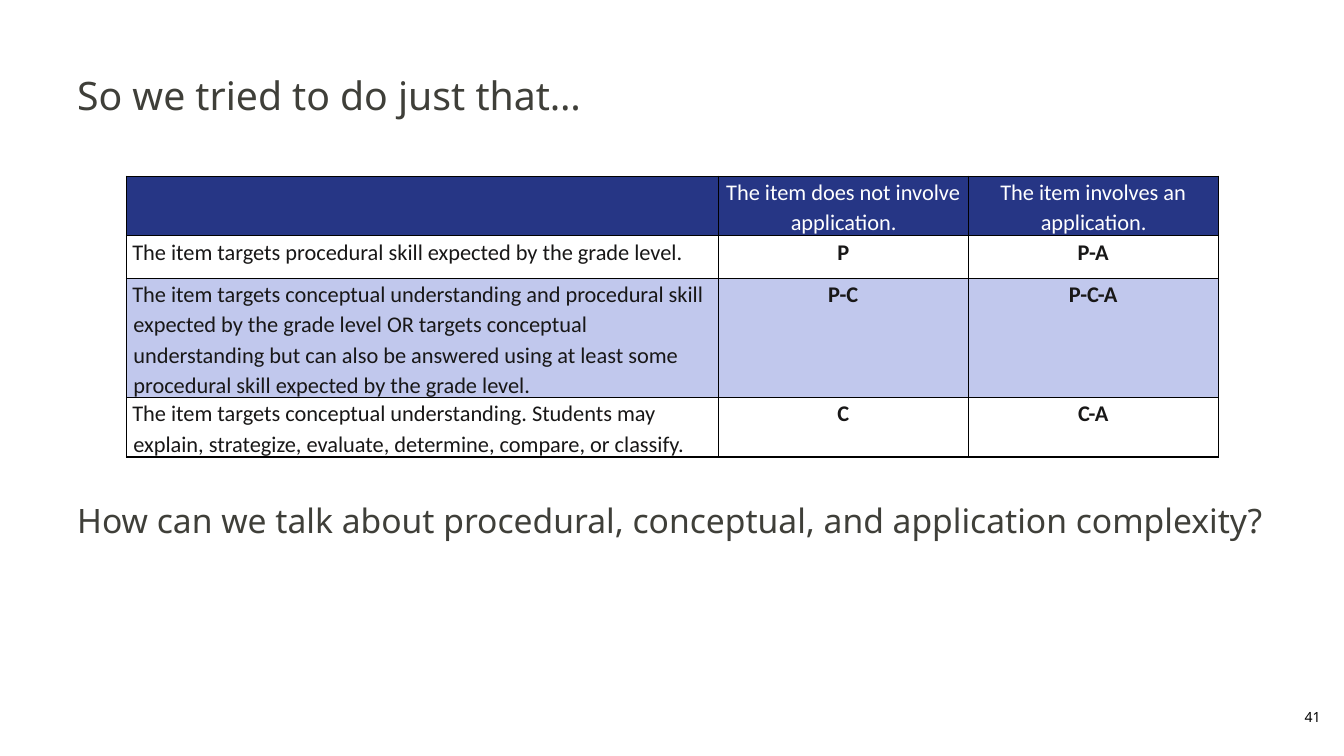
from dataclasses import dataclass
from pptx import Presentation
from pptx.dml.color import RGBColor as Rgb
from pptx.enum.text import MSO_ANCHOR as Anchor, PP_ALIGN as Align
from pptx.oxml.ns import qn
from pptx.util import Inches, Pt
from lxml.etree import SubElement as Sub

WIDE, HIGH = 13.33, 7.5


@dataclass(frozen=True)
class Theme:
    head: str = "Noto Sans"
    body: str = "Calibri"
    ink: str = "3F3F39"
    dark: str = "181717"
    black: str = "000000"
    white: str = "FFFFFF"
    navy: str = "263685"
    pale: str = "C1C8ED"
    title: int = 28
    ask: int = 24
    cell: int = 16
    page: int = 10


LOOK = Theme()
COLS = (5.87, 2.48, 2.48)
ROWS = (
    (0.51, LOOK.navy, ("", "The item does not involve application.",
                       "The item involves an application.")),
    (0.42, LOOK.white, ("The item targets procedural skill expected by the grade level.",
                        "P", "P-A")),
    (0.89, LOOK.pale, ("The item targets conceptual understanding and procedural skill "
                       "expected by the grade level OR targets conceptual understanding "
                       "but can also be answered using at least some procedural skill "
                       "expected by the grade level.", "P-C", "P-C-A")),
    (0.44, LOOK.white, ("The item targets conceptual understanding. Students may explain, "
                        "strategize, evaluate, determine, compare, or classify.",
                        "C", "C-A")),
)


def place(left, top, width, height):
    return (Inches(WIDE * left), Inches(HIGH * top),
            Inches(WIDE * width), Inches(HIGH * height))


def add_run(para, text, face, size, color, bold=False):
    run = para.add_run()
    run.text = text
    font = run.font
    font.name, font.size, font.bold = face, Pt(size), bold
    font.color.rgb = Rgb.from_string(color)


def add_text(slide, box, text, size, color, align=Align.LEFT, anchor=Anchor.TOP):
    frame = slide.shapes.add_textbox(*place(*box)).text_frame
    frame.word_wrap = True
    frame.vertical_anchor = anchor
    para = frame.paragraphs[0]
    para.alignment = align
    add_run(para, text, LOOK.head, size, color)


def add_edges(cell):
    props = cell._tc.get_or_add_tcPr()
    for spot, side in enumerate(("lnL", "lnR", "lnT", "lnB")):
        line = props.makeelement(qn(f"a:{side}"), {"w": str(Pt(1))})
        props.insert(spot, line)
        fill = Sub(line, qn("a:solidFill"))
        Sub(fill, qn("a:srgbClr"), val=LOOK.black)


def fill_cell(cell, text, fill, color, align, bold):
    cell.fill.solid()
    cell.fill.fore_color.rgb = Rgb.from_string(fill)
    cell.margin_left = cell.margin_right = Inches(0.06)
    cell.margin_top = cell.margin_bottom = 0
    add_edges(cell)
    if text:
        para = cell.text_frame.paragraphs[0]
        para.alignment = align
        para.line_spacing = 1.11
        props = para._p.get_or_add_pPr()
        props.set("marL", str(Inches(0.01)))
        props.set("indent", str(Inches(-0.01)))
        add_run(para, text, LOOK.body, LOOK.cell, color, bold)


def add_grid(slide, box):
    grid = slide.shapes.add_table(len(ROWS), len(COLS), *place(*box)).table
    grid.horz_banding = False
    for col, width in zip(grid.columns, COLS):
        col.width = Inches(width)
    for r, (height, fill, texts) in enumerate(ROWS):
        grid.rows[r].height = Inches(height)
        for c, text in enumerate(texts):
            color = LOOK.dark if r else LOOK.white
            align = Align.CENTER if c else Align.LEFT
            fill_cell(grid.cell(r, c), text, fill, color, align, bool(r and c))


def main():
    deck = Presentation()
    deck.slide_width, deck.slide_height = Inches(WIDE), Inches(HIGH)
    slide = deck.slides.add_slide(deck.slide_layouts[6])
    add_text(slide, (0.83, 0.93, 0.16, 0.04), "41", LOOK.page, LOOK.black, Align.RIGHT)
    add_text(slide, (0.05, 0.04, 0.9, 0.17), "So we tried to do just that…",
             LOOK.title, LOOK.ink, anchor=Anchor.MIDDLE)
    add_text(slide, (0.05, 0.655, 0.9, 0.24),
             "How can we talk about procedural, conceptual, and application complexity?",
             LOOK.ask, LOOK.ink)
    add_grid(slide, (0.094, 0.233, 0.81, 0.3))
    deck.save("out.pptx")


if __name__ == "__main__":
    main()
